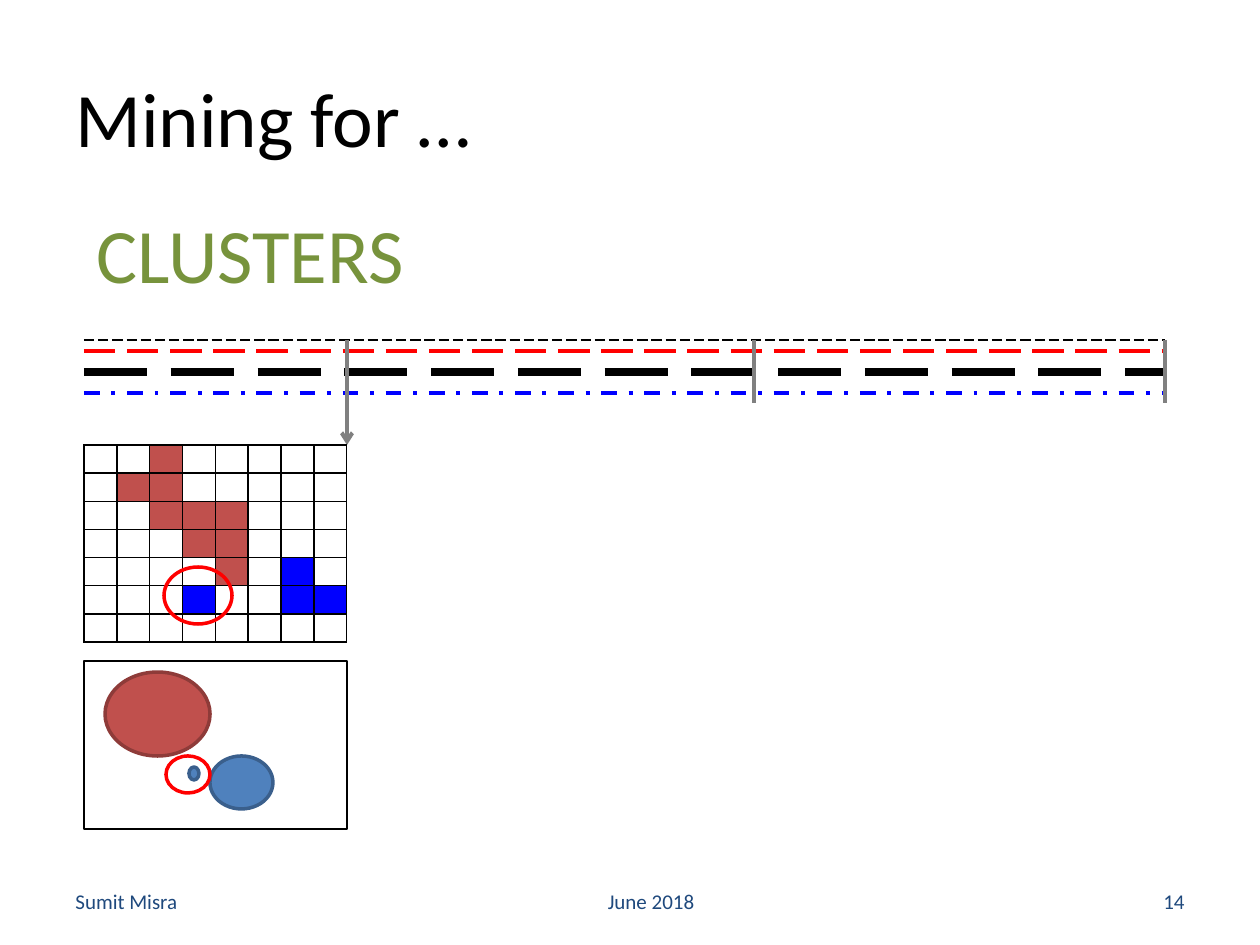
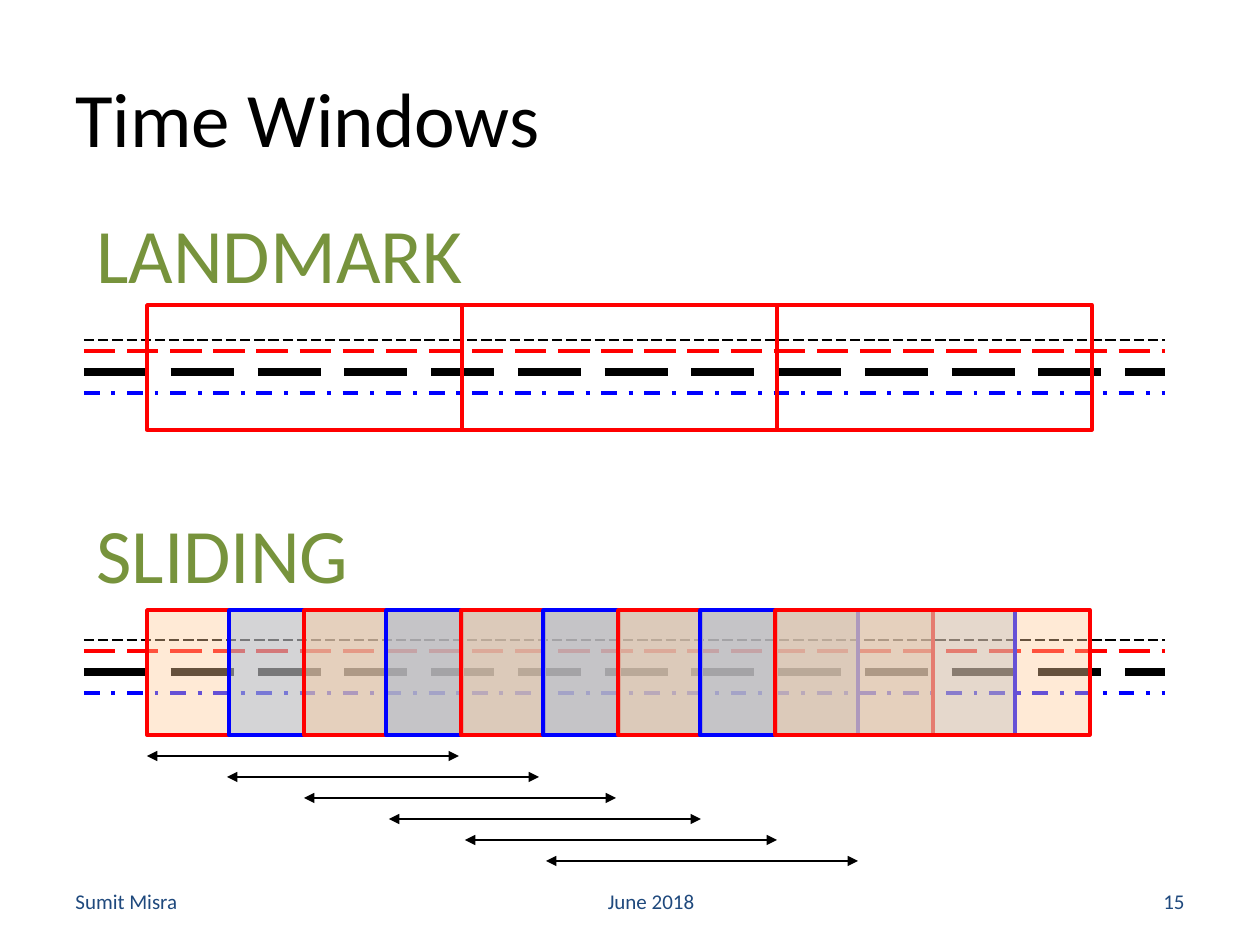
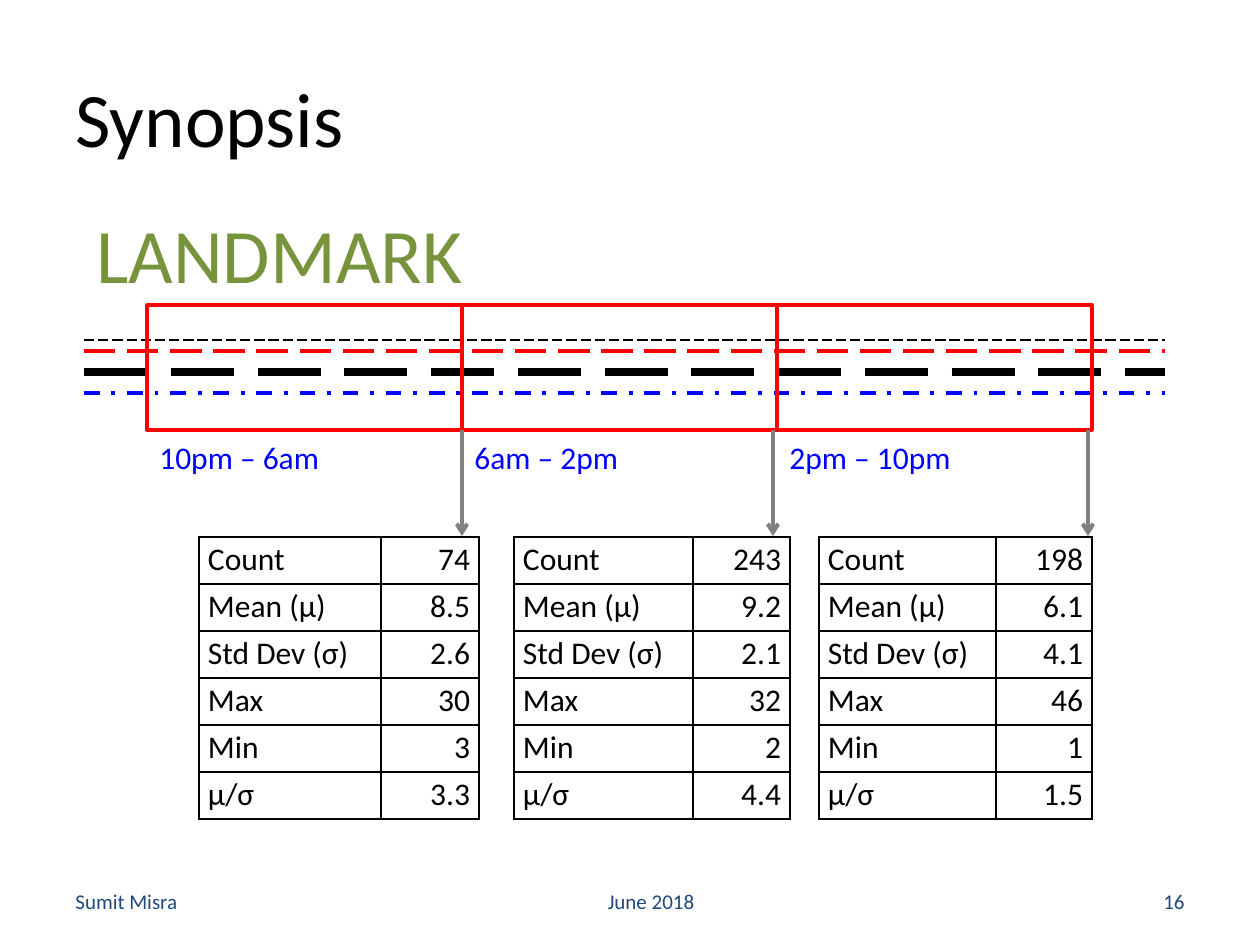
from lxml.etree import SubElement
from pptx import Presentation
from pptx.dml.color import RGBColor
from pptx.enum.dml import MSO_LINE
from pptx.enum.shapes import MSO_CONNECTOR, MSO_SHAPE
from pptx.enum.text import MSO_ANCHOR, PP_ALIGN
from pptx.oxml.ns import qn
from pptx.util import Pt

EMU_PER_PX = 914400 / 126
FONT = "Calibri"
BLACK = RGBColor(0x00, 0x00, 0x00)
RED = RGBColor(0xFF, 0x00, 0x00)
BLUE = RGBColor(0x00, 0x00, 0xFF)
GRAY = RGBColor(0x80, 0x80, 0x80)
NAVY = RGBColor(0x1F, 0x49, 0x7D)
GREEN = RGBColor(0x77, 0x93, 0x3C)
BRICK = RGBColor(0xC0, 0x50, 0x4D)
DARK_BRICK = RGBColor(0x8E, 0x3B, 0x39)
STEEL = RGBColor(0x4F, 0x81, 0xBD)
DARK_STEEL = RGBColor(0x3A, 0x5F, 0x8C)
PEACH = RGBColor(0xFF, 0xCC, 0x99)
SKY = RGBColor(0x95, 0xB3, 0xD7)

STREAM_LEFT, STREAM_WIDTH = 84, 1081
STREAM_TOP, SLIDING_TOP = 340, 640
WINDOW_LEFT, WINDOW_TOP, WINDOW_WIDTH, WINDOW_HEIGHT = 147, 305, 315, 125
STREAMS = [
    (0, BLACK, 0.75, MSO_LINE.LONG_DASH),
    (32, BLACK, 4.5, MSO_LINE.LONG_DASH),
    (11, RED, 2.25, MSO_LINE.LONG_DASH),
    (53, BLUE, 2.25, MSO_LINE.DASH_DOT),
]
CLUSTER_MAP = [
    "..R.....",
    ".RR.....",
    "..RRR...",
    "...RR...",
    "....R.B.",
    "...B..BB",
    "........",
]
CLUSTER_FILLS = {"R": BRICK, "B": BLUE}
STATISTICS = ["Count", "Mean (µ)", "Std Dev (σ)", "Max", "Min", "µ/σ"]
SHIFTS = [
    ("10pm – 6am", 462, 199, 280, ["74", "8.5", "2.6", "30", "3", "3.3"]),
    ("6am – 2pm", 773, 514, 276, ["243", "9.2", "2.1", "32", "2", "4.4"]),
    ("2pm – 10pm", 1088, 819, 273, ["198", "6.1", "4.1", "46", "1", "1.5"]),
]


def px(n):
    """Turn pixels into EMU."""
    return round(n * EMU_PER_PX)


def add_run(p, text, size, color):
    """Add one formatted run to a paragraph."""
    r = p.add_run()
    r.text = text
    r.font.name = FONT
    r.font.size = Pt(size)
    r.font.color.rgb = color


def add_text(s, box, text, size, color, align=PP_ALIGN.LEFT, anchor=MSO_ANCHOR.MIDDLE, wrap=True):
    """Add a one-line text box."""
    tf = s.shapes.add_textbox(*map(px, box)).text_frame
    tf.word_wrap = wrap
    tf.vertical_anchor = anchor
    p = tf.paragraphs[0]
    p.alignment = align
    add_run(p, text, size, color)


def add_line(s, start, end, color, width, dash=None, head=None, tail=None):
    """Add a straight line with optional dashes and arrowheads."""
    c = s.shapes.add_connector(MSO_CONNECTOR.STRAIGHT, *map(px, start + end))
    c.line.color.rgb = color
    c.line.width = Pt(width)
    if dash:
        c.line.dash_style = dash
    sp_pr = c._element.spPr
    ln = sp_pr.find(qn("a:ln"))
    for tag, kind in (("a:headEnd", head), ("a:tailEnd", tail)):
        if kind:
            SubElement(ln, qn(tag), type=kind)
    SubElement(sp_pr, qn("a:effectLst"))


def add_outline(s, kind, box, line, fill=None, width=2, alpha=None):
    """Add an outlined shape, hollow unless a fill is given."""
    sp = s.shapes.add_shape(kind, *map(px, box))
    sp.shadow.inherit = False
    sp.line.color.rgb = line
    sp.line.width = Pt(width)
    if fill is None:
        sp.fill.background()
        return
    sp.fill.solid()
    sp.fill.fore_color.rgb = fill
    if alpha:
        color = sp._element.spPr.find(qn("a:solidFill")).find(qn("a:srgbClr"))
        SubElement(color, qn("a:alpha"), val=str(alpha * 1000))


def add_grid(s, box, col_widths, row_count):
    """Add an unfilled table with black borders and return it."""
    table = s.shapes.add_table(row_count, len(col_widths), *map(px, box)).table
    table.first_row = table.horz_banding = False
    for col, width in zip(table.columns, col_widths):
        col.width = px(width)
    for row in table.rows:
        row.height = px(box[3] / row_count)
    for cell in table.iter_cells():
        tc_pr = cell._tc.get_or_add_tcPr()
        for side in ("a:lnL", "a:lnR", "a:lnT", "a:lnB"):
            ln = SubElement(tc_pr, qn(side), w=str(Pt(1)))
            SubElement(SubElement(ln, qn("a:solidFill")), qn("a:srgbClr"), val=str(BLACK))
        cell.fill.background()
    return table


def add_base(prs, title, number):
    """Add a slide with its title and footers."""
    s = prs.slides.add_slide(prs.slide_layouts[6])
    add_text(s, (63, 38, 1134, 158), title, 44, BLACK)
    for left, width, text, align in (
        (504, 294, "June 2018", PP_ALIGN.CENTER),
        (63, 400, "Sumit Misra", PP_ALIGN.LEFT),
        (903, 294, str(number), PP_ALIGN.RIGHT),
    ):
        add_text(s, (left, 876, width, 50), text, 12, NAVY, align)
    return s


def add_streams(s, top, heading):
    """Add the four data streams under their heading."""
    right = STREAM_LEFT + STREAM_WIDTH
    for dy, color, width, dash in STREAMS:
        add_line(s, (STREAM_LEFT, top + dy), (right, top + dy), color, width, dash)
    box = (STREAM_LEFT, top - 140, 400, 106)
    add_text(s, box, heading, 44, GREEN, anchor=MSO_ANCHOR.TOP, wrap=False)


def add_landmark_windows(s):
    """Add three adjoining time windows."""
    for i in range(3):
        box = (WINDOW_LEFT + i * WINDOW_WIDTH, WINDOW_TOP, WINDOW_WIDTH, WINDOW_HEIGHT)
        add_outline(s, MSO_SHAPE.RECTANGLE, box, RED)


def add_sliding_windows(s, left, top):
    """Add overlapping time windows and the spans below them."""
    for i in range(9):
        pair, odd = divmod(i, 2)
        line, fill = (BLUE, SKY) if odd else (RED, PEACH)
        box = (left + pair * 157 + odd * 82, top, WINDOW_WIDTH, WINDOW_HEIGHT)
        add_outline(s, MSO_SHAPE.RECTANGLE, box, line, fill, alpha=40)
    for i, dx in enumerate((0, 80, 157, 242, 318, 399)):
        y = top + 146 + 21 * i
        add_line(s, (left + dx, y), (left + dx + 312, y), BLACK, 0.75,
                 head="triangle", tail="triangle")


def add_cluster_grid(s, left, top, width, height):
    """Add the grid of clustered cells with its outlier ringed."""
    cols = len(CLUSTER_MAP[0])
    table = add_grid(s, (left, top, width, height), [width / cols] * cols, len(CLUSTER_MAP))
    for i, marks in enumerate(CLUSTER_MAP):
        for j, mark in enumerate(marks):
            cell = table.cell(i, j)
            cell.margin_top = cell.margin_bottom = 0
            SubElement(cell.text_frame.paragraphs[0]._p, qn("a:endParaRPr"), sz="800")
            if mark in CLUSTER_FILLS:
                cell.fill.solid()
                cell.fill.fore_color.rgb = CLUSTER_FILLS[mark]
    add_outline(s, MSO_SHAPE.OVAL, (left + 80, top + 122, 68, 57), RED)


def add_cluster_plot(s, left, top, width, height):
    """Add the framed plot of clusters with its outlier ringed."""
    for x, y, w, h, line, fill in (
        (21, 11, 105, 84, DARK_BRICK, BRICK),
        (126, 95, 63, 53, DARK_STEEL, STEEL),
        (105, 106, 10, 13, DARK_STEEL, STEEL),
        (82, 95, 44, 37, RED, None),
    ):
        add_outline(s, MSO_SHAPE.OVAL, (left + x, top + y, w, h), line, fill)
    add_outline(s, MSO_SHAPE.RECTANGLE, (left, top, width, height), BLACK, width=0.75)


def add_statistics(s, left, top, width, values):
    """Add the statistics table of one shift."""
    label_width = round(width * 0.65)
    box = (left, top, width, 47 * len(STATISTICS))
    table = add_grid(s, box, [label_width, width - label_width], len(STATISTICS))
    for i, texts in enumerate(zip(STATISTICS, values)):
        for j, (text, align) in enumerate(zip(texts, (PP_ALIGN.LEFT, PP_ALIGN.RIGHT))):
            cell = table.cell(i, j)
            cell.margin_left = cell.margin_right = px(9)
            cell.margin_top = cell.margin_bottom = px(4)
            p = cell.text_frame.paragraphs[0]
            p.alignment = align
            add_run(p, text, 18, BLACK)


def build_clusters(prs):
    """Build the slide on mining for clusters."""
    s = add_base(prs, "Mining for …", 14)
    add_streams(s, STREAM_TOP, "CLUSTERS")
    add_line(s, (347, STREAM_TOP), (347, 445), GRAY, 2.25, tail="arrow")
    for x in (754, 1165):
        add_line(s, (x, STREAM_TOP), (x, 403), GRAY, 2.25)
    add_cluster_grid(s, STREAM_LEFT, 445, 263, 197)
    add_cluster_plot(s, STREAM_LEFT, 661, 263, 168)


def build_time_windows(prs):
    """Build the slide on landmark and sliding windows."""
    s = add_base(prs, "Time Windows", 15)
    add_streams(s, STREAM_TOP, "LANDMARK")
    add_streams(s, SLIDING_TOP, "SLIDING")
    add_landmark_windows(s)
    add_sliding_windows(s, WINDOW_LEFT, 610)


def build_synopsis(prs):
    """Build the slide summarising each landmark window."""
    s = add_base(prs, "Synopsis", 16)
    add_streams(s, STREAM_TOP, "LANDMARK")
    add_landmark_windows(s)
    bottom = WINDOW_TOP + WINDOW_HEIGHT
    for i, (hours, arrow_x, left, width, values) in enumerate(SHIFTS):
        box = (WINDOW_LEFT + i * WINDOW_WIDTH, bottom + 2, 190, 50)
        add_text(s, box, hours, 18, BLUE, anchor=MSO_ANCHOR.TOP, wrap=False)
        add_line(s, (arrow_x, bottom), (arrow_x, bottom + 106), GRAY, 2.25, tail="arrow")
        add_statistics(s, left, bottom + 107, width, values)


def main():
    """Build the presentation."""
    prs = Presentation()
    prs.slide_width, prs.slide_height = px(1260), px(945)
    build_clusters(prs)
    build_time_windows(prs)
    build_synopsis(prs)
    prs.save("out.pptx")


if __name__ == "__main__":
    main()
